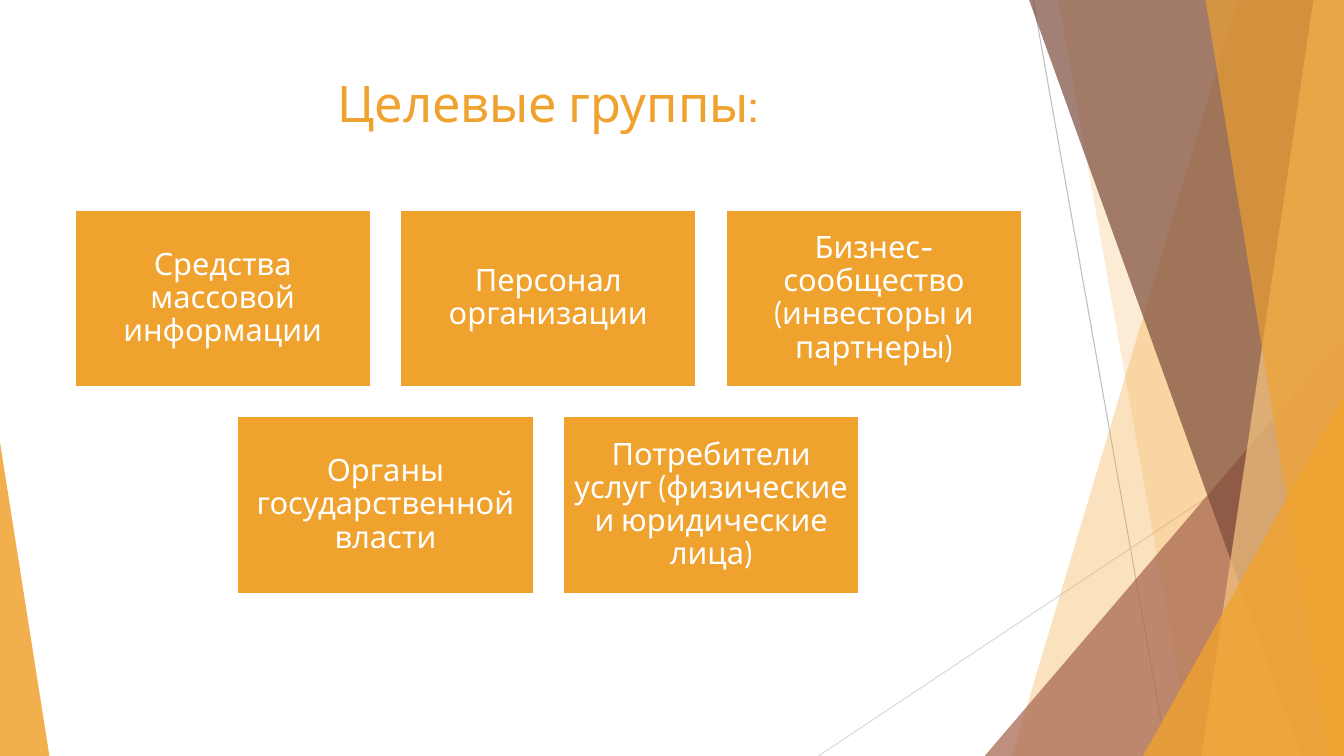
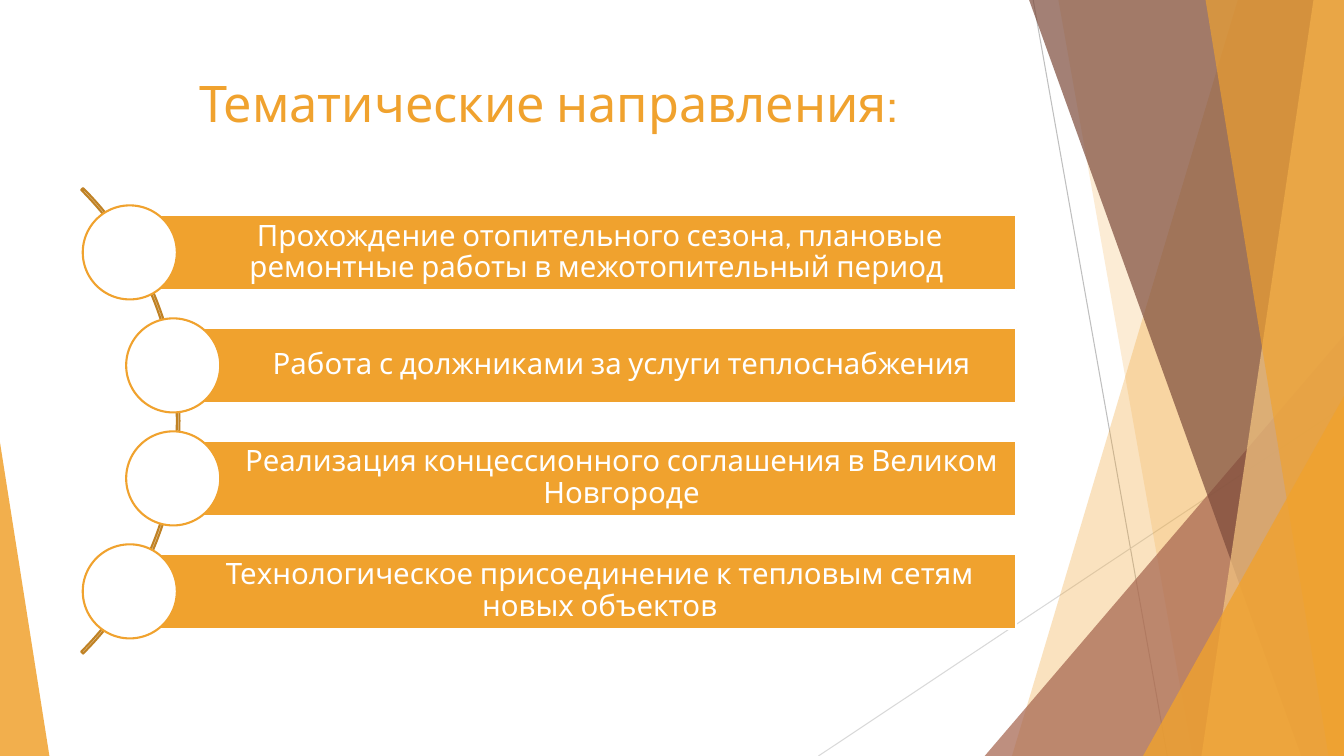
from lxml import etree
from pptx import Presentation
from pptx import util as u
from pptx.dml.color import RGBColor
from pptx.enum import shapes, text
from pptx.oxml.ns import qn

Pt = u.Pt
WIDTH, HEIGHT = 960, 540
FONT = "Cabin"
COLORS = {
    "orange": "F0A22E",
    "sand": "F6C782",
    "clay": "A5644E",
    "brown": "7C4B3B",
    "arc": "C08225",
    "white": "FFFFFF",
    "line": "BFBFBF",
    "pale_line": "D9D9D9",
}
SHAPE = shapes.MSO_SHAPE


class Deck:
    """Holds the shared style and the current slide."""

    def __init__(self):
        self.prs = Presentation()
        self.prs.slide_width, self.prs.slide_height = Pt(WIDTH), Pt(HEIGHT)
        self.s = None

    def color(self, name):
        return RGBColor.from_string(COLORS[name])

    def new_slide(self, title):
        self.s = self.prs.slides.add_slide(self.prs.slide_layouts[6])
        self.backdrop()
        sp = self.s.shapes.add_textbox(Pt(53.3), Pt(48.2), Pt(676.8), Pt(62))
        self.add_words(sp, title, 36, "orange")

    def backdrop(self):
        self.line(738, 0, 833.8, HEIGHT, "line")
        self.line(WIDTH, 290.2, 584.6, HEIGHT, "pale_line")
        self.facet(884.2, 722.9, "orange", 30)
        self.facet(756, 851.8, "orange", 20)
        self.triangle(703.4, 239.8, 256.6, 1, "clay", 72)
        self.facet(735.1, 929.5, "brown", 70)
        self.facet(938.2, 858.2, "sand", 70)
        self.facet(861.1, 949, "orange", 65)
        self.triangle(816.5, 283, 143.5, 1, "orange", 80)
        self.triangle(0, 316.1, 35.3, 0, "orange", 85)

    def line(self, x1, y1, x2, y2, color):
        c = self.s.shapes.add_connector(
            shapes.MSO_CONNECTOR.STRAIGHT, Pt(x1), Pt(y1), Pt(x2), Pt(y2))
        c.line.color.rgb = self.color(color)
        c.line.width = Pt(0.75)
        etree.SubElement(c.element.spPr, qn("a:effectLst"))

    def paint(self, sp, fill=None, line=None, alpha=100):
        sp.shadow.inherit = False
        if fill:
            sp.fill.solid()
            sp.fill.fore_color.rgb = self.color(fill)
            if alpha < 100:
                clr = sp.element.spPr.find(qn("a:solidFill"))[0]
                etree.SubElement(clr, qn("a:alpha"), val=str(alpha * 1000))
        else:
            sp.fill.background()
        if line:
            sp.line.color.rgb = self.color(line)
            sp.line.width = Pt(1.5)
        else:
            sp.line.fill.background()

    def facet(self, top_x, bottom_x, color, alpha):
        """A band from a slanted left edge to the right side of the slide."""
        fb = self.s.shapes.build_freeform(Pt(top_x), 0)
        corners = [(WIDTH, 0), (WIDTH, HEIGHT), (bottom_x, HEIGHT)]
        fb.add_line_segments([(Pt(x), Pt(y)) for x, y in corners])
        self.paint(fb.convert_to_shape(), color, alpha=alpha)

    def triangle(self, x, y, w, apex, color, alpha):
        """A triangle standing on the bottom of the slide."""
        sp = self.shape(SHAPE.ISOSCELES_TRIANGLE, x, y, w, HEIGHT - y)
        sp.adjustments[0] = apex
        self.paint(sp, color, alpha=alpha)

    def shape(self, kind, x, y, w, h):
        return self.s.shapes.add_shape(kind, Pt(x), Pt(y), Pt(w), Pt(h))

    def box(self, x, y, w, h, words, size, inset, left_inset):
        sp = self.shape(SHAPE.RECTANGLE, x, y, w, h)
        self.paint(sp, "orange", "white")
        tf = sp.text_frame
        tf.vertical_anchor = text.MSO_ANCHOR.MIDDLE
        tf.margin_top = tf.margin_right = tf.margin_bottom = Pt(inset)
        tf.margin_left = Pt(left_inset)
        self.add_words(sp, words, size, "white", 0.9)

    def circle(self, cx, cy, d):
        sp = self.shape(SHAPE.OVAL, cx - d / 2, cy - d / 2, d, d)
        self.paint(sp, "white", "orange")

    def arc(self, x, y, d):
        """A thin arc from 315 to 45 degrees."""
        sp = self.shape(SHAPE.BLOCK_ARC, x, y, d, d)
        for i, value in enumerate((189, 27, 0.004)):
            sp.adjustments[i] = value
        self.paint(sp, line="arc")

    def add_words(self, sp, words, size, color, spacing=None):
        tf = sp.text_frame
        tf.word_wrap = True
        p = tf.paragraphs[0]
        p.alignment = text.PP_ALIGN.CENTER
        p.line_spacing = spacing
        r = p.add_run()
        r.text = words
        r.font.name, r.font.size = FONT, Pt(size)
        r.font.color.rgb = self.color(color)


def target_groups(deck):
    deck.new_slide("Целевые группы:")
    rows = [
        ["Средства массовой информации", "Персонал организации",
         "Бизнес-сообщество (инвесторы и партнеры)"],
        ["Органы государственной власти",
         "Потребители услуг (физические и юридические лица)"],
    ]
    # Each row is centred under the title
    w, h, gap, center, top = 211.7, 126.7, 20.9, 391.7, 149.8
    for i, row in enumerate(rows):
        left = center - (len(row) * (w + gap) - gap) / 2
        for j, words in enumerate(row):
            deck.box(left + j * (w + gap), top + i * (h + gap), w, h,
                     words, 22, 6.6, 6.6)


def themes(deck):
    deck.new_slide("Тематические направления:")
    deck.arc(-342, 65.5, 470.2)
    # Bars start at the centres of circles that follow the arc
    outer, inner, right = 92.7, 123.7, 725.8
    top, pitch, h = 153.4, 80.7, 53.8
    bars = [
        (outer, "Прохождение отопительного сезона, плановые ремонтные "
                "работы в межотопительный период "),
        (inner, "Работа с должниками за услуги теплоснабжения"),
        (inner, "Реализация концессионного соглашения в Великом Новгороде"),
        (outer, "Технологическое присоединение к тепловым сетям "
                "новых объектов"),
    ]
    for i, (x, words) in enumerate(bars):
        y = top + i * pitch
        deck.box(x, y, right - x, h, words, 21, 4.2, 42.7)
        deck.circle(x, y + h / 2, 67.2)


def main():
    deck = Deck()
    target_groups(deck)
    themes(deck)
    deck.prs.save("out.pptx")


if __name__ == "__main__":
    main()
